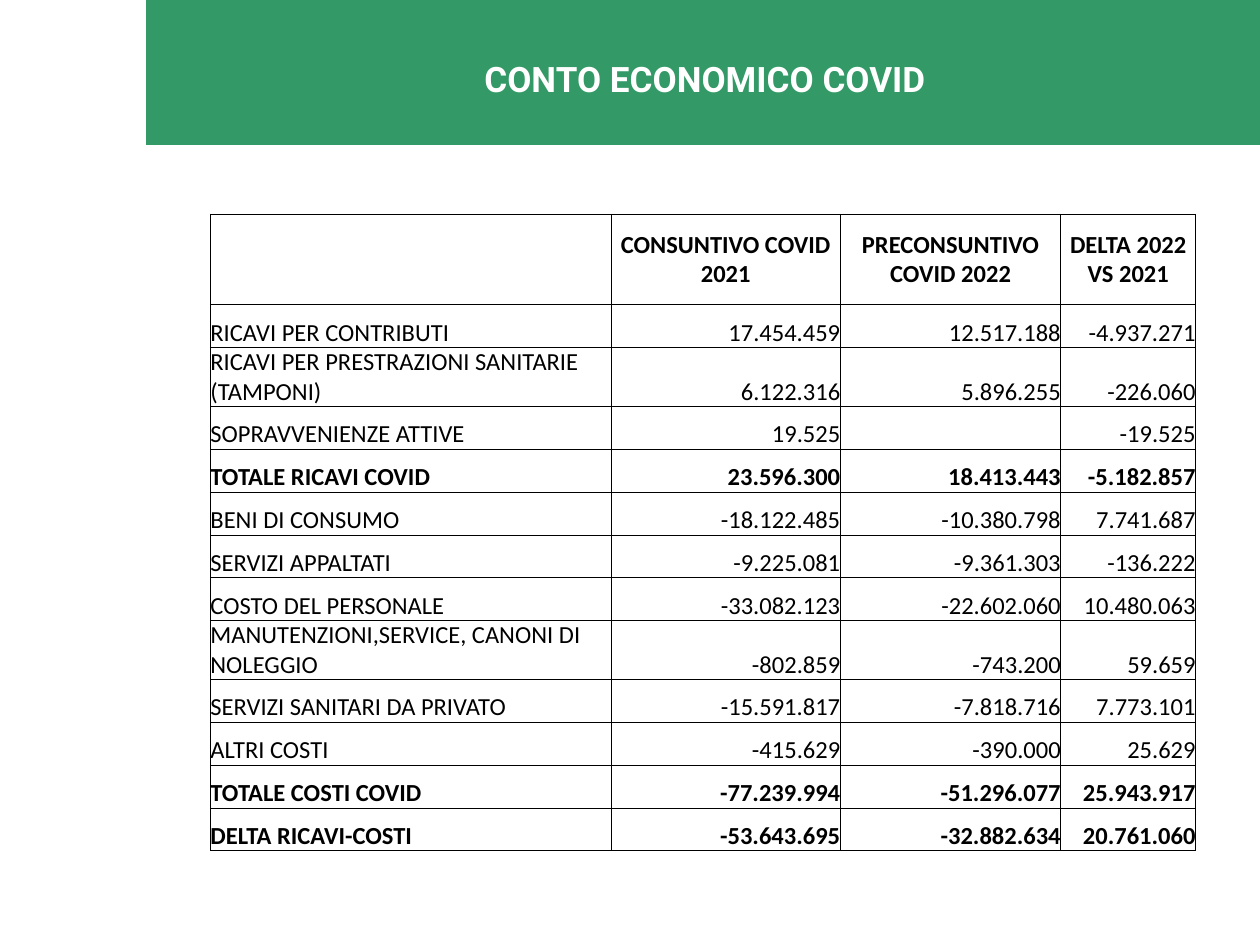
import lxml.etree
import pptx
import pptx.dml.color
import pptx.enum.shapes
import pptx.enum.text
import pptx.oxml.ns
import pptx.util

Inches = pptx.util.Inches
Align = pptx.enum.text.PP_ALIGN
Anchor = pptx.enum.text.MSO_ANCHOR

COLORS = {"green": "339966", "white": "FFFFFF", "black": "000000"}

COLUMN_WIDTHS = [3.18, 1.82, 1.75, 1.07]
HEADER_HEIGHT = 0.72
ROW_HEIGHT = 0.34
TALL_ROWS = {2: 0.39}
BOLD_LABELS = {"TOTALE RICAVI COVID", "TOTALE COSTI COVID", "DELTA RICAVI-COSTI"}

ROWS = [
    ["", "CONSUNTIVO COVID 2021", "PRECONSUNTIVO COVID 2022", "DELTA 2022 VS 2021"],
    ["RICAVI PER CONTRIBUTI", "17.454.459", "12.517.188", "-4.937.271"],
    ["RICAVI PER PRESTRAZIONI SANITARIE (TAMPONI)", "6.122.316", "5.896.255", "-226.060"],
    ["SOPRAVVENIENZE ATTIVE", "19.525", "", "-19.525"],
    ["TOTALE RICAVI COVID", "23.596.300", "18.413.443", "-5.182.857"],
    ["BENI DI CONSUMO", "-18.122.485", "-10.380.798", "7.741.687"],
    ["SERVIZI APPALTATI", "-9.225.081", "-9.361.303", "-136.222"],
    ["COSTO DEL PERSONALE", "-33.082.123", "-22.602.060", "10.480.063"],
    ["MANUTENZIONI,SERVICE, CANONI DI NOLEGGIO", "-802.859", "-743.200", "59.659"],
    ["SERVIZI SANITARI DA PRIVATO", "-15.591.817", "-7.818.716", "7.773.101"],
    ["ALTRI COSTI", "-415.629", "-390.000", "25.629"],
    ["TOTALE COSTI COVID", "-77.239.994", "-51.296.077", "25.943.917"],
    ["DELTA RICAVI-COSTI", "-53.643.695", "-32.882.634", "20.761.060"],
]


def rgb(name):
    return pptx.dml.color.RGBColor.from_string(COLORS[name])


class SlideBuilder:
    title_font, title_size = "Roboto", 20
    table_font, table_size = "Calibri", 14
    border_width = 0.5

    def __init__(self, slide):
        self.slide = slide

    def format_text(self, paragraph, font, size, color, bold, alignment):
        paragraph.alignment = alignment
        for run in paragraph.runs:
            run.font.name = font
            run.font.size = pptx.util.Pt(size)
            run.font.bold = bold
            run.font.color.rgb = rgb(color)

    def banner(self, left, top, width, height):
        shape = self.slide.shapes.add_shape(
            pptx.enum.shapes.MSO_SHAPE.RECTANGLE,
            Inches(left), Inches(top), Inches(width), Inches(height))
        shape.shadow.inherit = False
        shape.fill.solid()
        shape.fill.fore_color.rgb = rgb("green")
        shape.line.fill.background()
        # Keep the banner behind the title
        self.slide.shapes.element.insert(2, shape.element)

    def title(self, text, left, top, width, height):
        shape = self.slide.shapes.title
        shape.left, shape.top = Inches(left), Inches(top)
        shape.width, shape.height = Inches(width), Inches(height)
        frame = shape.text_frame
        frame.text = text
        frame.word_wrap = True
        frame.auto_size = pptx.enum.text.MSO_AUTO_SIZE.SHAPE_TO_FIT_TEXT
        frame.vertical_anchor = Anchor.MIDDLE
        self.format_text(frame.paragraphs[0], self.title_font, self.title_size,
                         "white", True, Align.CENTER)

    def cell_borders(self, cell):
        properties = cell._tc.get_or_add_tcPr()
        for side in ("a:lnL", "a:lnR", "a:lnT", "a:lnB"):
            line = lxml.etree.SubElement(properties, pptx.oxml.ns.qn(side),
                                         w=str(pptx.util.Pt(self.border_width)))
            fill = lxml.etree.SubElement(line, pptx.oxml.ns.qn("a:solidFill"))
            lxml.etree.SubElement(fill, pptx.oxml.ns.qn("a:srgbClr"), val=COLORS["black"])

    def cell(self, cell, text, header, bold, alignment):
        cell.margin_left = cell.margin_right = cell.margin_top = cell.margin_bottom = 0
        cell.vertical_anchor = Anchor.MIDDLE if header else Anchor.BOTTOM
        self.cell_borders(cell)
        if header:
            cell.fill.solid()
            cell.fill.fore_color.rgb = rgb("white")
        else:
            cell.fill.background()
        cell.text_frame.text = text
        self.format_text(cell.text_frame.paragraphs[0], self.table_font, self.table_size,
                         "black", bold, alignment)

    def table(self, rows, widths, heights, left, top):
        table = self.slide.shapes.add_table(
            len(rows), len(widths), Inches(left), Inches(top),
            Inches(sum(widths)), Inches(sum(heights))).table
        table.first_row = table.horz_banding = False
        for column, width in zip(table.columns, widths):
            column.width = Inches(width)
        for row, height in zip(table.rows, heights):
            row.height = Inches(height)
        for row_index, values in enumerate(rows):
            header = row_index == 0
            bold = header or values[0] in BOLD_LABELS
            for column_index, text in enumerate(values):
                body_alignment = Align.RIGHT if column_index else Align.LEFT
                self.cell(table.cell(row_index, column_index), text, header, bold,
                          Align.CENTER if header else body_alignment)


def main():
    presentation = pptx.Presentation()
    presentation.slide_width = Inches(10)
    presentation.slide_height = Inches(7.5)
    title_only = presentation.slide_layouts[5]
    builder = SlideBuilder(presentation.slides.add_slide(title_only))

    # Heading
    builder.banner(1.16, 0, 8.85, 1.15)
    builder.title("CONTO ECONOMICO COVID", 1.38, 0.4, 8.43, 0.44)

    # Income statement
    heights = [HEADER_HEIGHT] + [TALL_ROWS.get(index, ROW_HEIGHT)
                                 for index in range(1, len(ROWS))]
    builder.table(ROWS, COLUMN_WIDTHS, heights, 1.67, 1.7)

    presentation.save("out.pptx")


if __name__ == "__main__":
    main()
